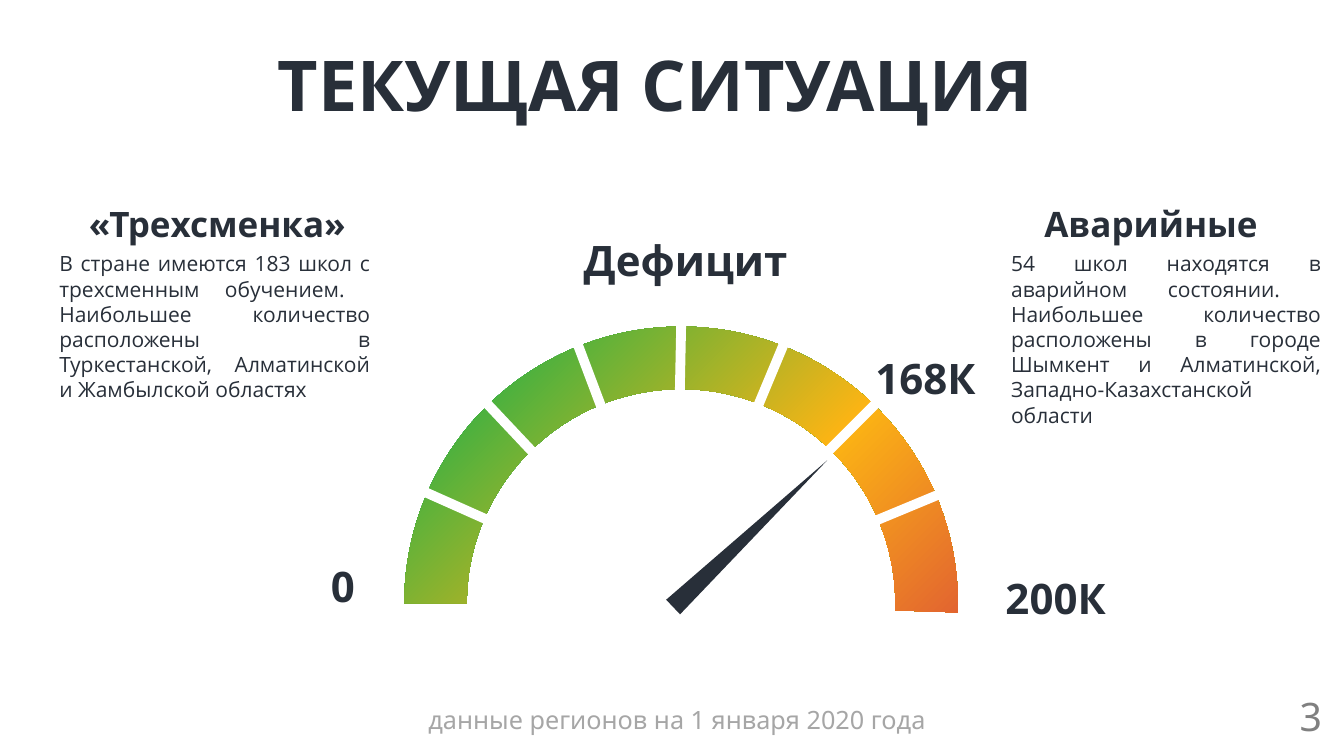
import dataclasses

import lxml.etree
import pptx
import pptx.dml.color
import pptx.enum.shapes
import pptx.enum.text
import pptx.oxml
import pptx.oxml.ns
import pptx.util

Inches = pptx.util.Inches
Pt = pptx.util.Pt
Shape = pptx.enum.shapes.MSO_SHAPE
Align = pptx.enum.text.PP_ALIGN
Fit = pptx.enum.text.MSO_AUTO_SIZE


@dataclasses.dataclass(frozen=True)
class Theme:
    ink: str = "282F39"
    pale: str = "A6A6A6"
    gray: str = "808080"
    white: str = "FFFFFF"
    stops: tuple = ((0, "CB1B4A"), (51, "FCB414"), (100, "00B050"))
    head: str = "Noto Sans"
    body: str = "Open Sans"
    title: int = 50
    label: int = 30
    page: int = 28
    topic: int = 25
    note: int = 18
    text: int = 15
    gap: int = 7


theme = Theme()


def color(code):
    return pptx.dml.color.RGBColor.from_string(code)


def lengths(*sizes):
    return [Inches(size) for size in sizes]


def write(slide, box, text, size=theme.label, font=theme.head, ink=theme.ink,
          bold=True, align=Align.CENTER, wrap=True):
    frame = slide.shapes.add_textbox(*lengths(*box)).text_frame
    frame.word_wrap = wrap
    frame.auto_size = Fit.SHAPE_TO_FIT_TEXT
    line = frame.paragraphs[0]
    line.alignment = align
    run = line.add_run()
    run.text = text
    run.font.name = font
    run.font.size = Pt(size)
    run.font.bold = bold
    run.font.color.rgb = color(ink)


def blend(shape):
    stops = "".join(
        f'<a:gs pos="{at * 1000}"><a:srgbClr val="{code}"/></a:gs>'
        for at, code in theme.stops)
    grad = pptx.oxml.parse_xml(
        f'<a:gradFill {pptx.oxml.ns.nsdecls("a")} rotWithShape="1">'
        f'<a:gsLst>{stops}</a:gsLst><a:path path="circle">'
        '<a:fillToRect l="100000" t="100000"/></a:path></a:gradFill>')
    shape.fill.solid()
    props = shape._element.spPr
    props.replace(props.find(pptx.oxml.ns.qn("a:solidFill")), grad)


def add_gauge(slide, box):
    left, top, width, height = box
    group = slide.shapes.add_group_shape().shapes

    arc = group.add_shape(Shape.BLOCK_ARC, *lengths(*box))
    for i, value in enumerate((108, 1.133, 0.113)):
        arc.adjustments[i] = value
    blend(arc)
    arc.line.fill.background()
    arc.shadow.inherit = False

    hub = (left + 2.69, top + 2.75)
    tips = ((0, 1.55), (0.61, 0.54), (1.65, -0.01), (2.75, -0.21),
            (3.84, -0.01), (4.79, 0.65), (5.46, 1.6))
    for x, y in tips:
        spoke = group.add_connector(
            pptx.enum.shapes.MSO_CONNECTOR.STRAIGHT,
            *lengths(*hub, left + x, top + y))
        spoke.line.color.rgb = color(theme.white)
        spoke.line.width = Pt(theme.gap)
        lxml.etree.SubElement(spoke._element.spPr,
                              pptx.oxml.ns.qn("a:effectLst"))

    hand = slide.shapes.add_shape(
        Shape.ISOSCELES_TRIANGLE,
        *lengths(left + 3.33, top + 1, 0.2, 2.11))
    hand.rotation = 46.4
    hand.fill.solid()
    hand.fill.fore_color.rgb = color(theme.ink)
    hand.line.fill.background()
    hand.shadow.inherit = False

    labels = (("Дефицит", 1.56, -0.96, 2.46), ("0", -1.84, 2.27, 2.46),
              ("200К", 5.23, 2.39, 2.46), ("168К", 4.34, 0.21, 1.66))
    for text, x, y, span in labels:
        write(slide, (left + x, top + y, span, 0.61), text)


def add_topic(slide, box, head, text, shift, span):
    left, top, width, height = box
    write(slide, (left + shift, top, span, 0.52), head, size=theme.topic)
    write(slide, (left, top + 0.48, width, height - 0.48), text,
          size=theme.text, font=theme.body, bold=False, align=Align.JUSTIFY)


def add_foot(slide, box):
    left, top, width, height = box
    write(slide, (left, top + 0.12, width, 0.4),
          "данные регионов на 1 января 2020 года",
          size=theme.note, ink=theme.pale, bold=False)
    write(slide, (left + 12.29, top, 0.42, height), "3", size=theme.page,
          ink=theme.gray, bold=False, align=Align.LEFT, wrap=False)


def main():
    deck = pptx.Presentation()
    deck.slide_width, deck.slide_height = lengths(13.33, 7.5)
    slide = deck.slides.add_slide(deck.slide_layouts[6])
    add_gauge(slide, (4.01, 3.24, 5.49, 5.49))
    write(slide, (0.62, 0.36, 11.77, 0.94), "ТЕКУЩАЯ СИТУАЦИЯ",
          size=theme.title)
    add_topic(slide, (0.49, 1.96, 3.28, 2.1), "«Трехсменка»",
              "В стране имеются 183 школ с трехсменным обучением.  "
              "Наибольшее количество расположены в Туркестанской, "
              "Алматинской и Жамбылской областях", 0.13, 3.07)
    add_topic(slide, (9.93, 1.96, 3.27, 2.35), "Аварийные",
              "54 школ находятся в аварийном состоянии.  "
              "Наибольшее количество расположены в городе Шымкент и "
              "Алматинской, Западно-Казахстанской области", 0.08, 2.81)
    add_foot(slide, (0.5, 6.82, 12.43, 0.57))
    deck.save("out.pptx")


if __name__ == "__main__":
    main()
